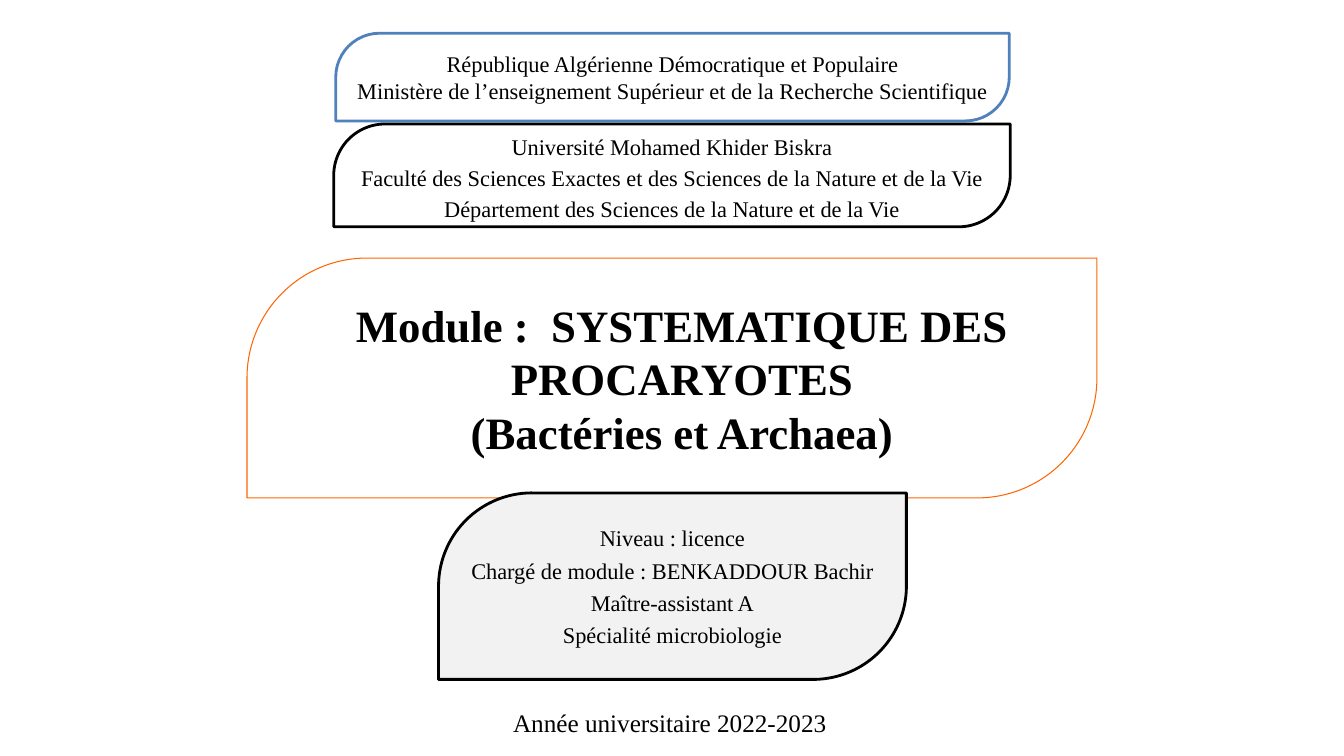
"""Build the title slide of a course on the classification of prokaryotes."""
from dataclasses import dataclass

from pptx import Presentation
from pptx.dml.color import RGBColor
from pptx.enum.shapes import MSO_SHAPE
from pptx.enum.text import MSO_ANCHOR, MSO_AUTO_SIZE, PP_ALIGN
from pptx.util import Inches, Pt

LEAF = MSO_SHAPE.ROUND_2_DIAG_RECTANGLE
MIDDLE = MSO_ANCHOR.MIDDLE
GROW = MSO_AUTO_SIZE.SHAPE_TO_FIT_TEXT
FIXED = MSO_AUTO_SIZE.NONE
CENTER = PP_ALIGN.CENTER
LEFT = PP_ALIGN.LEFT


@dataclass(frozen=True)
class Theme:
    """Hold the colours, font and type sizes."""

    font: str = "Times New Roman"
    ink: str = "000000"
    white: str = "FFFFFF"
    grey: str = "F2F2F2"
    blue: str = "4F81BD"
    orange: str = "FF6600"
    title: int = 32
    body: int = 16
    year: int = 18
    thin: float = 0.75
    thick: float = 2


class Painter:
    """Draw elements on the current slide in one style."""

    def __init__(self, theme, slide):
        """Keep the theme and the slide."""
        self.theme = theme
        self.slide = slide

    def add_text(self, frame, lines, size, bold=False, align=CENTER,
                 before=0, pitch=None, indent=0):
        """Add paragraphs, breaking lines within one at each newline."""
        for i, line in enumerate(lines):
            para = frame.paragraphs[0] if i == 0 else frame.add_paragraph()
            para.alignment = align
            para.space_before = Pt(before)
            if pitch:
                para.line_spacing = pitch
            if indent:
                para._p.get_or_add_pPr().set("marL", str(Inches(indent)))
            for j, part in enumerate(line.split("\n")):
                if j:
                    para.add_line_break()
                run = para.add_run()
                run.text = part
                run.font.name = self.theme.font
                run.font.size = Pt(size)
                run.font.bold = bold
                run.font.color.rgb = RGBColor.from_string(self.theme.ink)

    def leaf(self, box, lines, size, line, weight, fill=None, wrap=False,
             fit=GROW, **style):
        """Add a leaf-shaped panel with centred text."""
        shape = self.slide.shapes.add_shape(LEAF, *map(Inches, box))
        shape.shadow.inherit = False
        shape.adjustments[0] = 0.5
        shape.adjustments[1] = 0
        if fill:
            shape.fill.solid()
            shape.fill.fore_color.rgb = RGBColor.from_string(fill)
        else:
            shape.fill.background()
        shape.line.color.rgb = RGBColor.from_string(line)
        shape.line.width = Pt(weight)
        frame = shape.text_frame
        frame.margin_left = frame.margin_right = Inches(0.04)
        frame.margin_top = frame.margin_bottom = Inches(0.04)
        frame.vertical_anchor = MIDDLE
        frame.word_wrap = wrap
        frame.auto_size = fit
        self.add_text(frame, lines, size, **style)

    def label(self, box, text, size):
        """Add a single line of plain text."""
        frame = self.slide.shapes.add_textbox(*map(Inches, box)).text_frame
        frame.word_wrap = False
        frame.auto_size = GROW
        self.add_text(frame, [text], size, align=LEFT)


def main():
    """Build and save the slide."""
    deck = Presentation()
    deck.slide_width = Inches(13.33)
    deck.slide_height = Inches(7.5)
    theme = Theme()
    painter = Painter(theme, deck.slides.add_slide(deck.slide_layouts[6]))

    painter.leaf(
        (2.45, 2.56, 8.43, 2.38),
        ["Module :  SYSTEMATIQUE DES PROCARYOTES\n(Bactéries et Archaea)"],
        theme.title, theme.orange, theme.thin,
        wrap=True, bold=True, before=7, indent=0.2)
    painter.leaf(
        (4.35, 4.89, 4.64, 1.85),
        ["Niveau : licence",
         "Chargé de module : BENKADDOUR Bachir",
         "Maître-assistant A",
         "Spécialité microbiologie"],
        theme.body, theme.ink, theme.thick, theme.grey, before=3.8)
    painter.leaf(
        (3.33, 0.33, 6.68, 0.87),
        ["République Algérienne Démocratique et Populaire",
         "Ministère de l’enseignement Supérieur et de la Recherche Scientifique"],
        theme.body, theme.blue, theme.thick, theme.white)
    painter.leaf(
        (3.31, 1.23, 6.71, 1.02),
        ["Université Mohamed Khider Biskra",
         "Faculté des Sciences Exactes et des Sciences de la Nature et de la Vie",
         "Département des Sciences de la Nature et de la Vie"],
        theme.body, theme.ink, theme.thick, theme.white, fit=FIXED, pitch=1.15)
    painter.label((4.99, 6.97, 3.34, 0.4),
                  "Année universitaire 2022-2023", theme.year)

    deck.save("out.pptx")


if __name__ == "__main__":
    main()
